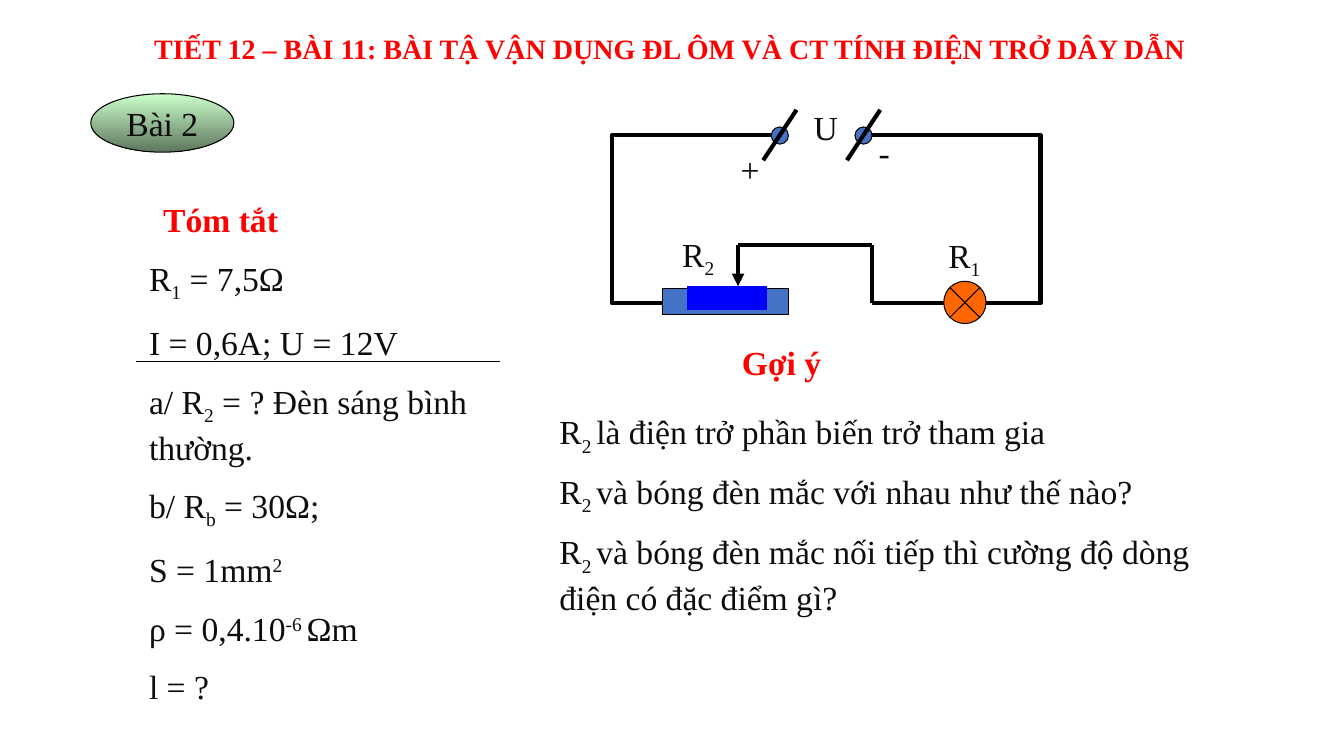
from lxml import etree
from pptx import Presentation
from pptx.dml.color import RGBColor
from pptx.enum.shapes import MSO_CONNECTOR, MSO_SHAPE
from pptx.enum.text import MSO_ANCHOR, PP_ALIGN
from pptx.oxml.ns import qn
from pptx.util import Inches, Pt

STRAIGHT = MSO_CONNECTOR.STRAIGHT
RECTANGLE = MSO_SHAPE.RECTANGLE
OVAL = MSO_SHAPE.OVAL
LAMP = MSO_SHAPE.FLOWCHART_SUMMING_JUNCTION
LEFT, CENTER, JUSTIFY = PP_ALIGN.LEFT, PP_ALIGN.CENTER, PP_ALIGN.JUSTIFY
MIDDLE = MSO_ANCHOR.MIDDLE

COLORS = {
    "ink": "0D0D0D", "red": "FF0000", "black": "000000", "white": "FFFFFF",
    "terminal": "4472C4", "slider": "0000FF", "lamp": "FF6600",
    "badge_top": "CCFFCC", "badge_bottom": "5E765E",
}
BODY = {"name": "Times New Roman", "size": Pt(24), "bold": False}
HEADING = {**BODY, "bold": True}
TITLE = {**HEADING, "size": Pt(20)}
BASELINES = {"_": "-25000", "^": "30000"}
WIRE = 3
THIN = 0.75


def color(name):
    return RGBColor.from_string(COLORS[name])


def write_paragraph(paragraph, text, font, ink, align=LEFT):
    """Write text in which _{...} is a subscript and ^{...} a superscript."""
    paragraph.alignment = align
    pieces = []
    for chunk in text.split("}"):
        plain, brace, script = chunk.partition("{")
        if brace:
            pieces += [(plain[:-1], None), (script, BASELINES[plain[-1]])]
        else:
            pieces.append((plain, None))
    for content, baseline in pieces:
        if not content:
            continue
        run = paragraph.add_run()
        run.text = content
        for attribute, value in font.items():
            setattr(run.font, attribute, value)
        run.font.color.rgb = color(ink)
        if baseline:
            run._r.get_or_add_rPr().set("baseline", baseline)


def add_text(shapes, box, lines, font=BODY, ink="ink", align=LEFT):
    frame = shapes.add_textbox(*map(Inches, box)).text_frame
    frame.word_wrap = True
    for index, line in enumerate(lines):
        paragraph = frame.add_paragraph() if index else frame.paragraphs[0]
        if index:
            paragraph.space_before = Pt(13)
        write_paragraph(paragraph, line, font, ink, align)


def add_block(shapes, kind, box, fill=None, line="black", width=THIN):
    shape = shapes.add_shape(kind, *map(Inches, box))
    shape.shadow.inherit = False
    if fill:
        shape.fill.solid()
        shape.fill.fore_color.rgb = color(fill)
    else:
        shape.fill.background()
    if line:
        shape.line.color.rgb = color(line)
        shape.line.width = Pt(width)
    else:
        shape.line.fill.background()
    return shape


def add_line(shapes, start, end, width=WIRE, arrow=False):
    connector = shapes.add_connector(STRAIGHT, *map(Inches, (*start, *end)))
    connector.line.color.rgb = color("black")
    connector.line.width = Pt(width)
    if arrow:
        outline = connector.line._get_or_add_ln()
        etree.SubElement(outline, qn("a:tailEnd"), type="triangle")
    etree.SubElement(connector._element.spPr, qn("a:effectLst"))


def add_badge(slide, box):
    badge = add_block(slide.shapes, OVAL, box)
    badge.fill.gradient()
    badge.fill.gradient_angle = 270
    stops = zip(badge.fill.gradient_stops, (0, 1), ("badge_top", "badge_bottom"))
    for stop, position, name in stops:
        stop.position = position
        stop.color.rgb = color(name)
    frame = badge.text_frame
    frame.word_wrap = False
    frame.vertical_anchor = MIDDLE
    write_paragraph(frame.paragraphs[0], "Bài 2", BODY, "ink", CENTER)


def add_summary(slide, box):
    left, top, width, height = box
    shapes = slide.shapes
    add_text(shapes, (left + 0.14, top, 2.08, 0.5), ["Tóm tắt"], HEADING, "red")
    add_text(shapes, (left, top + 0.59, width, height - 0.59), [
        "R_{1} = 7,5Ω",
        "I = 0,6A; U = 12V",
        "a/ R_{2} = ? Đèn sáng bình thường.",
        "b/ R_{b} = 30Ω;",
        "S = 1mm^{2}",
        "ρ = 0,4.10^{-6 }Ωm",
        "l = ?",
    ])
    # Rule between the given values and the questions
    rule = top + 1.67
    add_line(shapes, (left - 0.03, rule), (left + width, rule), width=0.5)


def add_circuit(slide, box):
    left, top, width, height = box
    bottom = top + height
    shapes = slide.shapes.add_group_shape().shapes

    # Main loop and the gap for the source
    add_block(shapes, RECTANGLE, box, width=WIRE)
    add_block(shapes, RECTANGLE, (left + 1.66, top - 0.16, 0.83, 0.33), "white", None)
    for terminal in (left + 1.67, left + 2.5):
        add_block(shapes, OVAL, (terminal - 0.09, top - 0.08, 0.17, 0.17), "terminal")
        add_line(shapes, (terminal + 0.16, top - 0.25), (terminal - 0.17, top + 0.25))

    # Rheostat with its sliding contact
    add_block(shapes, RECTANGLE, (left + 0.83, bottom - 0.17, 1.75, 0.42), "white", None)
    add_block(shapes, RECTANGLE, (left + 0.5, bottom - 0.15, 1.25, 0.26), "terminal")
    contact, corner, bridge = left + 1.25, left + 2.58, top + 1.09
    add_line(shapes, (contact, bridge), (contact, bottom - 0.17), arrow=True)
    add_line(shapes, (contact, bridge), (corner, bridge))
    add_line(shapes, (corner, bridge), (corner, bottom))
    add_block(shapes, RECTANGLE, (left + 0.75, bottom - 0.17, 0.78, 0.23),
              "slider", "slider")

    # Lamp
    add_block(shapes, LAMP, (left + 3.29, bottom - 0.22, 0.42, 0.42), "lamp")

    # Labels: text, offset from the loop's corner, width
    labels = [
        ("U", 1.83, -0.33, 0.58), ("+", 1.08, 0.09, 0.58), ("-", 2.41, -0.08, 0.58),
        ("R_{1}", 3.08, 0.94, 0.83), ("R_{2}", 0.44, 0.93, 0.83),
    ]
    for text, across, down, label_width in labels:
        add_text(shapes, (left + across, top + down, label_width, 0.51), [text],
                 align=CENTER)


def add_hints(slide, box):
    left, top, width, height = box
    add_text(slide.shapes, (left + 1.81, top, 1.28, 0.51), ["Gợi ý"], HEADING, "red")
    hints = [
        ("R_{2 }là điện trở phần biến trở tham gia", 0.69, 0.5),
        ("R_{2 }và bóng đèn mắc với nhau như thế nào?", 1.28, 0.5),
        ("R_{2 }và bóng đèn mắc nối tiếp thì cường độ dòng điện có đặc điểm gì?",
         1.88, height - 1.88),
    ]
    for text, down, hint_height in hints:
        add_text(slide.shapes, (left, top + down, width, hint_height), [text])


def add_title(slide, box):
    add_text(slide.shapes, box, [
        "TIẾT 12 – BÀI 11: BÀI TẬ VẬN DỤNG ĐL ÔM VÀ CT TÍNH ĐIỆN TRỞ DÂY DẪN",
    ], TITLE, "red", JUSTIFY)


def main():
    presentation = Presentation()
    presentation.slide_width = Inches(13.33)
    presentation.slide_height = Inches(7.5)
    slide = presentation.slides.add_slide(presentation.slide_layouts[6])
    add_title(slide, (1.43, 0.26, 11.8, 0.44))
    add_badge(slide, (0.9, 0.93, 1.42, 0.58))
    add_summary(slide, (1.38, 1.92, 3.58, 5.16))
    add_circuit(slide, (6.07, 1.34, 4.25, 1.67))
    add_hints(slide, (5.45, 3.34, 6.6, 2.8))
    presentation.save("out.pptx")


if __name__ == "__main__":
    main()
